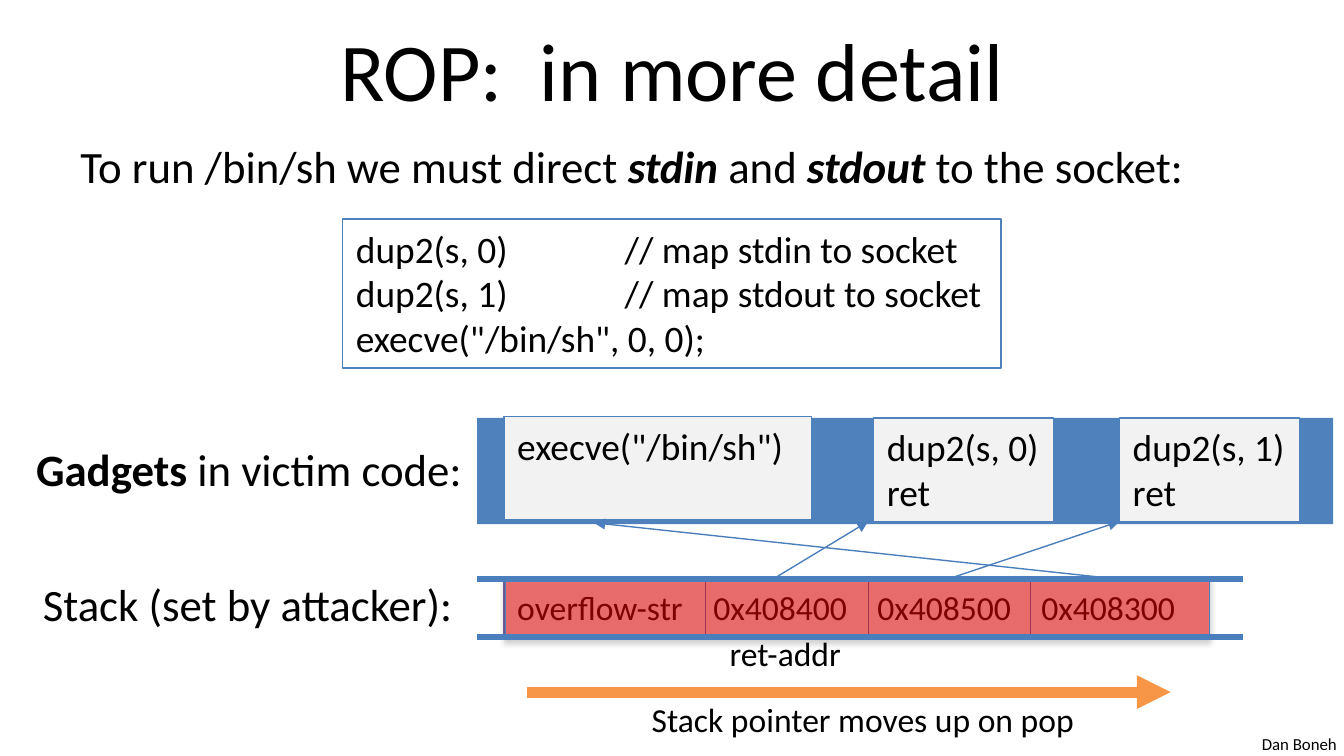
from lxml import etree
from pptx import Presentation
from pptx.dml.color import RGBColor
from pptx.enum import shapes, text
from pptx.oxml import parse_xml
from pptx.oxml.ns import nsdecls, qn
from pptx.util import Inches, Pt

COLORS = {
    "black": "000000", "blue": "4F81BD", "line": "4B7EBC", "gray": "F2F2F2",
    "purple": "8064A2", "orange": "F79646", "red": "FF0000",
}
FONT = "Calibri"


def rgb(name):
    return RGBColor.from_string(COLORS[name])


def write(sp, paragraphs, size=20, align=text.PP_ALIGN.LEFT,
          anchor=text.MSO_ANCHOR.TOP, wrap=True, tabs=()):
    """Each paragraph is a string or a list of (string, style), style from 'b', 'i'."""
    tf = sp.text_frame
    tf.word_wrap = wrap
    tf.vertical_anchor = anchor
    for n, runs in enumerate(paragraphs):
        p = tf.add_paragraph() if n else tf.paragraphs[0]
        p.alignment = align
        if tabs:
            tab_list = etree.SubElement(p._p.get_or_add_pPr(), qn("a:tabLst"))
            for pos in tabs:
                etree.SubElement(tab_list, qn("a:tab"), pos=str(Inches(pos)), algn="l")
        for words, style in [(runs, "")] if isinstance(runs, str) else runs:
            r = p.add_run()
            r.text = words
            r.font.name, r.font.size = FONT, Pt(size)
            r.font.color.rgb = rgb("black")
            r.font.bold, r.font.italic = "b" in style, "i" in style
    return sp


class Deck:
    def __init__(self, prs):
        self.s = prs.slides.add_slide(prs.slide_layouts[5])

    def title(self, words, *box):
        sp = self.s.shapes.title
        sp.left, sp.top, sp.width, sp.height = map(Inches, box)
        write(sp, [words], size=44, align=text.PP_ALIGN.CENTER,
              anchor=text.MSO_ANCHOR.MIDDLE)

    def label(self, paragraphs, *box, **fmt):
        sp = self.s.shapes.add_textbox(*map(Inches, box))
        return write(sp, paragraphs, **fmt)

    def rect(self, *box, fill=None, line=None, paragraphs=(), **fmt):
        sp = self.s.shapes.add_shape(shapes.MSO_SHAPE.RECTANGLE, *map(Inches, box))
        sp.shadow.inherit = False
        if fill:
            sp.fill.solid()
            sp.fill.fore_color.rgb = rgb(fill)
        else:
            sp.fill.background()
        if line:
            sp.line.color.rgb = rgb(line)
            sp.line.width = Pt(0.75)
        else:
            sp.line.fill.background()
        return write(sp, paragraphs, **fmt)

    def line(self, x1, y1, x2, y2, color="line", width=0.75, arrow=False):
        c = self.s.shapes.add_connector(
            shapes.MSO_CONNECTOR.STRAIGHT, *map(Inches, (x1, y1, x2, y2)))
        c.line.color.rgb = rgb(color)
        c.line.width = Pt(width)
        if arrow:
            etree.SubElement(c.line._get_or_add_ln(), qn("a:tailEnd"), type="triangle")
        etree.SubElement(c._element.spPr, qn("a:effectLst"))


def glaze(sp, alpha, shadow_alpha):
    """Make the fill see-through and give the shape a soft shadow below."""
    color = sp._element.spPr.find(qn("a:solidFill"))[0]
    etree.SubElement(color, qn("a:alpha"), val=str(alpha * 1000))
    sp._element.spPr.find(qn("a:effectLst")).append(parse_xml(
        f'<a:outerShdw {nsdecls("a")} blurRad="{Pt(3.1)}" dist="{Pt(1.8)}" '
        f'dir="5400000" rotWithShape="0"><a:srgbClr val="{COLORS["black"]}">'
        f'<a:alpha val="{shadow_alpha * 1000}"/></a:srgbClr></a:outerShdw>'))


def main():
    # A 16:9 slide
    prs = Presentation()
    prs.slide_width = Inches(10)
    prs.slide_height = prs.slide_width * 9 // 16
    d = Deck(prs)

    # Author, title and lead sentence
    d.label(["Dan Boneh"], 9.29, 5.41, 0.76, 0.25, size=9, wrap=False)
    d.title("ROP:  in more detail", 0.5, 0.04, 9, 0.94)
    d.label([[("To run /bin/sh we must direct ", ""), ("stdin", "bi"), (" and ", ""),
              ("stdout", "bi"), (" to the socket:", "")]], 0.5, 0.98, 9, 0.5, size=24)

    # Code
    d.rect(2.55, 1.63, 4.9, 1.11, line="blue", tabs=[2], paragraphs=[
        "dup2(s, 0)\t// map stdin to socket",
        "dup2(s, 1)\t// map stdout to socket",
        'execve("/bin/sh", 0, 0);'])

    # Gadgets in the victim code
    d.rect(3.55, 3.11, 6.37, 0.79, fill="blue")
    d.label([[("Gadgets", "b"), (" in victim code:", "")]],
            0.17, 3.24, 3.38, 0.5, size=24, wrap=False)
    for x, call in ((8.33, "dup2(s, 1)"), (6.5, "dup2(s, 0)")):
        d.rect(x, 3.11, 1.34, 0.77, fill="gray", line="blue",
               paragraphs=[call, "ret"], wrap=False)
    d.rect(3.75, 3.1, 2.29, 0.77, fill="gray", line="blue",
           paragraphs=['execve("/bin/sh")'])

    # Stack contents
    d.label(["Stack (set by attacker):"], 0.22, 4.24, 3.28, 0.5, size=24, wrap=False)
    first, step = 5.25, 1.21
    d.rect(3.75, 4.32, 5.25, 0.4, line="purple", size=18,
           tabs=[1.46 + 1.22 * n for n in range(3)],
           paragraphs=["overflow-str\t0x408400\t0x408500\t0x408300"])
    for n in range(3):
        x = first + step * n
        d.line(x, 4.32, x, 4.72)

    # Stack pointer direction
    d.line(3.92, 5.15, 8.71, 5.15, color="orange", width=6, arrow=True)
    d.label(["Stack pointer moves up on pop"], 4.75, 5.15, 3.38, 0.4, size=18, wrap=False)
    d.label(["ret-addr"], 5.33, 4.66, 1.04, 0.4, size=18, wrap=False)

    # Overwritten region
    glaze(d.rect(3.76, 4.3, 5.24, 0.45, fill="red", line="line"), 49, 35)

    # Addresses point at gadgets
    for x1, x2, y2 in ((8.33, 4.42, 3.89), (5.75, 6.46, 3.88), (7.05, 8.33, 3.88)):
        d.line(x1, 4.31, x2, y2, arrow=True)

    # Stack borders
    for y in (4.31, 4.74):
        d.line(3.55, y, 9.25, y, width=3)

    prs.save("out.pptx")


if __name__ == "__main__":
    main()
